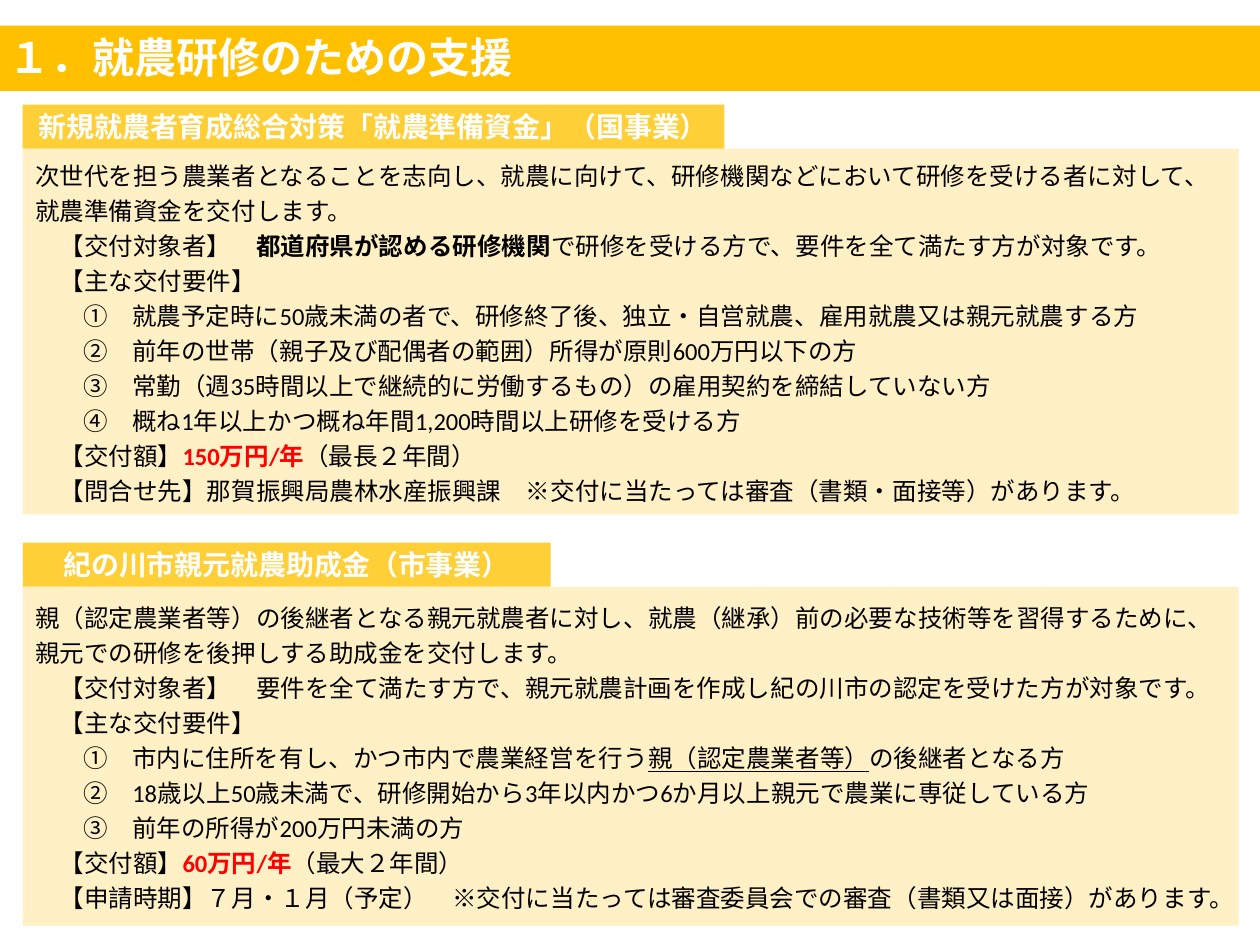
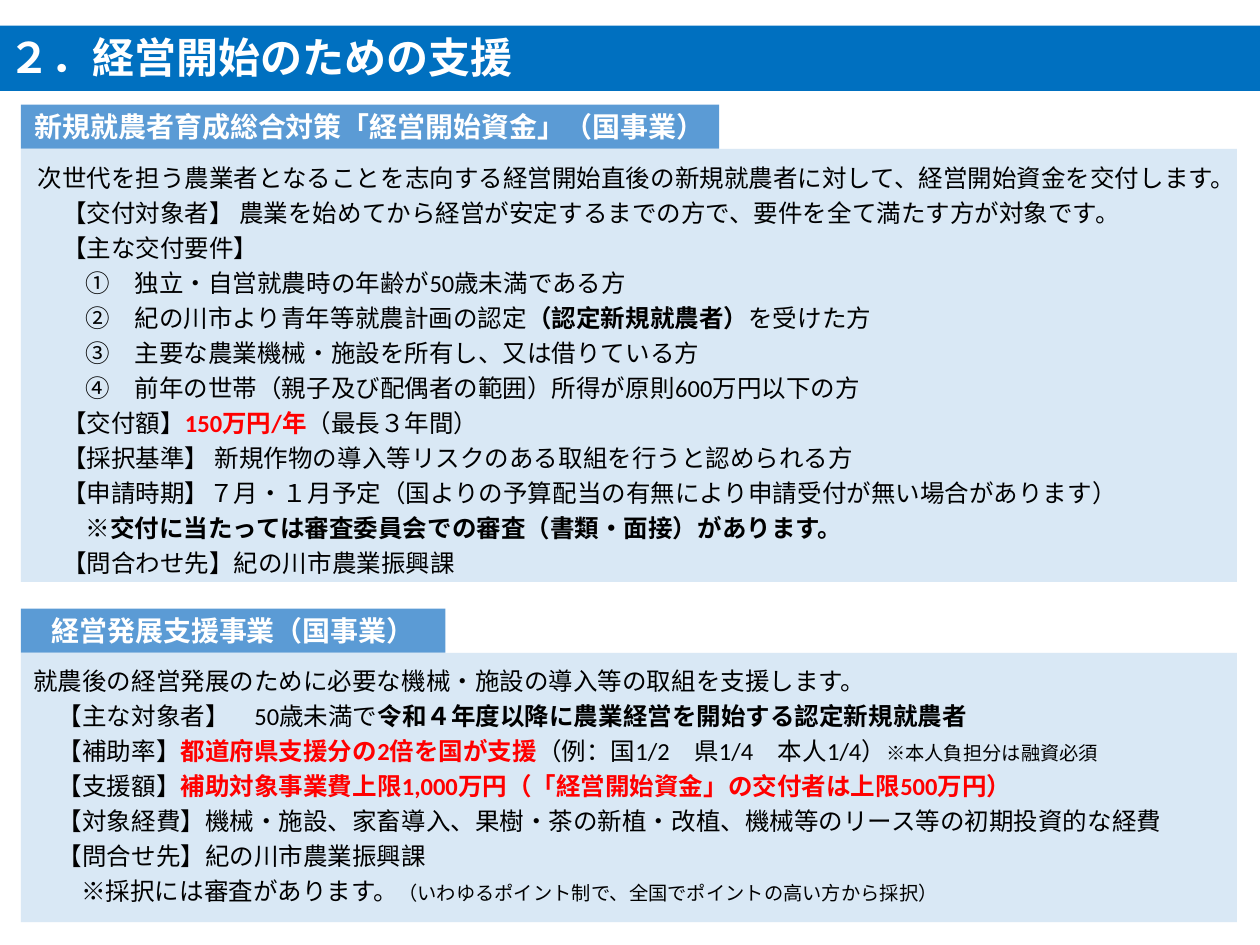
from lxml import etree
from pptx import Presentation
from pptx.dml.color import RGBColor
from pptx.enum import shapes, text
from pptx.oxml import ns
from pptx.util import Pt

FONT = "Calibri"
WHITE, BLACK, RED = "FFFFFF", "000000", "FF0000"
BOLD = {"bold": True}
AMOUNT = {"bold": True, "color": RED}
UNDERLINE = {"underline": True}
SMALL = {"size": 11}
SLIDE_WIDTH, SLIDE_HEIGHT = 720, 540
BOX_WIDTH, TAB_HEIGHT = 694.8, 25.2
INDENTS = {"intro": 0, "item": 14, "point": 27.4}

SLIDES = [
    {
        "title": "１．就農研修のための支援",
        "band": "FFC000", "tab": "FFCF37", "box": "FFE699", "left": 13,
        "sections": [
            {
                "heading": "新規就農者育成総合対策「就農準備資金」（国事業）",
                "tab_width": 401, "top": 85, "height": 209,
                "text_left": 13, "text_top": 85, "text_width": 694,
                "lines": [
                    ("intro", "次世代を担う農業者となることを志向し、就農に向けて、研修機関などにおいて研修を受ける者に対して、就農準備資金を交付します。"),
                    ("item", "【交付対象者】　", ("都道府県が認める研修機関", BOLD), "で研修を受ける方で、要件を全て満たす方が対象です。"),
                    ("item", "【主な交付要件】"),
                    ("point", "①　就農予定時に50歳未満の者で、研修終了後、独立・自営就農、雇用就農又は親元就農する方"),
                    ("point", "②　前年の世帯（親子及び配偶者の範囲）所得が原則600万円以下の方"),
                    ("point", "③　常勤（週35時間以上で継続的に労働するもの）の雇用契約を締結していない方"),
                    ("point", "④　概ね1年以上かつ概ね年間1,200時間以上研修を受ける方"),
                    ("item", "【交付額】", ("150万円/年", AMOUNT), "（最長２年間）"),
                    ("item", "【問合せ先】那賀振興局農林水産振興課　※交付に当たっては審査（書類・面接等）があります。"),
                ],
            },
            {
                "heading": "紀の川市親元就農助成金（市事業）",
                "tab_width": 301.7, "top": 335.3, "height": 193.7,
                "text_left": 13, "text_top": 337.7, "text_width": 694.8,
                "lines": [
                    ("intro", "親（認定農業者等）の後継者となる親元就農者に対し、就農（継承）前の必要な技術等を習得するために、親元での研修を後押しする助成金を交付します。"),
                    ("item", "【交付対象者】　要件を全て満たす方で、親元就農計画を作成し紀の川市の認定を受けた方が対象です。"),
                    ("item", "【主な交付要件】"),
                    ("point", "①　市内に住所を有し、かつ市内で農業経営を行う", ("親（認定農業者等）", UNDERLINE), "の後継者となる方"),
                    ("point", "②　18歳以上50歳未満で、研修開始から3年以内かつ6か月以上親元で農業に専従している方"),
                    ("point", "③　前年の所得が200万円未満の方"),
                    ("item", "【交付額】", ("60万円/年", AMOUNT), "（最大２年間）"),
                    ("item", "【申請時期】７月・１月（予定）　※交付に当たっては審査委員会での審査（書類又は面接）があります。"),
                ],
            },
        ],
    },
    {
        "title": "２．経営開始のための支援",
        "band": "0070C0", "tab": "5B9BD5", "box": "BDD7EE", "left": 12,
        "sections": [
            {
                "heading": "新規就農者育成総合対策「経営開始資金」（国事業）",
                "tab_width": 399, "top": 85, "height": 247.5,
                "text_left": 14.4, "text_top": 86.4, "text_width": 692.6,
                "lines": [
                    ("intro", "次世代を担う農業者となることを志向する経営開始直後の新規就農者に対して、経営開始資金を交付します。"),
                    ("item", "【交付対象者】 農業を始めてから経営が安定するまでの方で、要件を全て満たす方が対象です。"),
                    ("item", "【主な交付要件】"),
                    ("point", "①　独立・自営就農時の年齢が50歳未満である方"),
                    ("point", "②　紀の川市より青年等就農計画の認定", ("（認定新規就農者）", BOLD), "を受けた方"),
                    ("point", "③　主要な農業機械・施設を所有し、又は借りている方"),
                    ("point", "④　前年の世帯（親子及び配偶者の範囲）所得が原則600万円以下の方"),
                    ("item", "【交付額】", ("150万円/年", AMOUNT), "（最長３年間）"),
                    ("item", "【採択基準】 新規作物の導入等リスクのある取組を行うと認められる方"),
                    ("item", "【申請時期】７月・１月予定（国よりの予算配当の有無により申請受付が無い場合があります）"),
                    ("point", ("※交付に当たっては審査委員会での審査（書類・面接）があります。", BOLD)),
                    ("item", "【問合わせ先】紀の川市農業振興課"),
                ],
            },
            {
                "heading": "経営発展支援事業（国事業）",
                "tab_width": 242.6, "top": 373, "height": 154,
                "text_left": 12, "text_top": 373.7, "text_width": 694.8,
                "lines": [
                    ("intro", "就農後の経営発展のために必要な機械・施設の導入等の取組を支援します。"),
                    ("item", "【主な対象者】　50歳未満で", ("令和４年度以降に農業経営を開始する認定新規就農者", BOLD)),
                    ("item", "【補助率】", ("都道府県支援分の2倍を国が支援", AMOUNT), "（例：国1/2　県1/4　本人1/4）", ("※本人負担分は融資必須", SMALL)),
                    ("item", "【支援額】", ("補助対象事業費上限1,000万円（「経営開始資金」の交付者は上限500万円）", AMOUNT)),
                    ("item", "【対象経費】機械・施設、家畜導入、果樹・茶の新植・改植、機械等のリース等の初期投資的な経費"),
                    ("item", "【問合せ先】紀の川市農業振興課"),
                    ("point", "※採択には審査があります。", ("（いわゆるポイント制で、全国でポイントの高い方から採択）", SMALL)),
                ],
            },
        ],
    },
]


def add_rectangle(slide, left, top, width, height, color, opacity=100):
    shape = slide.shapes.add_shape(
        shapes.MSO_SHAPE.RECTANGLE, Pt(left), Pt(top), Pt(width), Pt(height))
    shape.shadow.inherit = False
    shape.line.fill.background()
    shape.fill.solid()
    shape.fill.fore_color.rgb = RGBColor.from_string(color)
    if opacity < 100:
        fill_color = shape.fill._xPr.find(".//" + ns.qn("a:srgbClr"))
        etree.SubElement(fill_color, ns.qn("a:alpha"), val=str(opacity * 1000))
    return shape


def add_run(paragraph, words, size=14, color=BLACK, bold=False, underline=False):
    run = paragraph.add_run()
    run.text = words
    run.font.name = FONT
    run.font.size = Pt(size)
    run.font.bold = bold
    run.font.underline = underline
    run.font.color.rgb = RGBColor.from_string(color)


presentation = Presentation()
presentation.slide_width = Pt(SLIDE_WIDTH)
presentation.slide_height = Pt(SLIDE_HEIGHT)

for content in SLIDES:
    slide = presentation.slides.add_slide(presentation.slide_layouts[6])
    add_rectangle(slide, 0, 14.7, SLIDE_WIDTH, 37.3, content["band"])

    title = slide.shapes.add_textbox(Pt(0), Pt(15.5), Pt(360), Pt(37)).text_frame
    title.word_wrap = True
    title.vertical_anchor = text.MSO_ANCHOR.MIDDLE
    title.margin_left = title.margin_right = Pt(5)
    title.margin_top = title.margin_bottom = Pt(3)
    title.paragraphs[0].line_spacing = 0.9
    add_run(title.paragraphs[0], content["title"], size=24, color=WHITE, bold=True)

    for section in content["sections"]:
        left, top, height = content["left"], section["top"], section["height"]
        add_rectangle(slide, left, top, BOX_WIDTH, height, content["box"], opacity=56)

        tab = add_rectangle(
            slide, left, top - TAB_HEIGHT, section["tab_width"], TAB_HEIGHT, content["tab"])
        heading = tab.text_frame
        heading.margin_left = heading.margin_right = Pt(0)
        heading.vertical_anchor = text.MSO_ANCHOR.MIDDLE
        heading.paragraphs[0].alignment = text.PP_ALIGN.CENTER
        add_run(heading.paragraphs[0], section["heading"], size=16, color=WHITE, bold=True)

        body = slide.shapes.add_textbox(
            Pt(section["text_left"]), Pt(section["text_top"]),
            Pt(section["text_width"]), Pt(height)).text_frame
        body.word_wrap = True
        for number, (kind, *runs) in enumerate(section["lines"]):
            paragraph = body.add_paragraph() if number else body.paragraphs[0]
            paragraph.line_spacing = Pt(20)
            paragraph._p.get_or_add_pPr().set("marL", str(Pt(INDENTS[kind])))
            for run in runs:
                words, style = (run, {}) if isinstance(run, str) else run
                add_run(paragraph, words, **style)

presentation.save("out.pptx")
